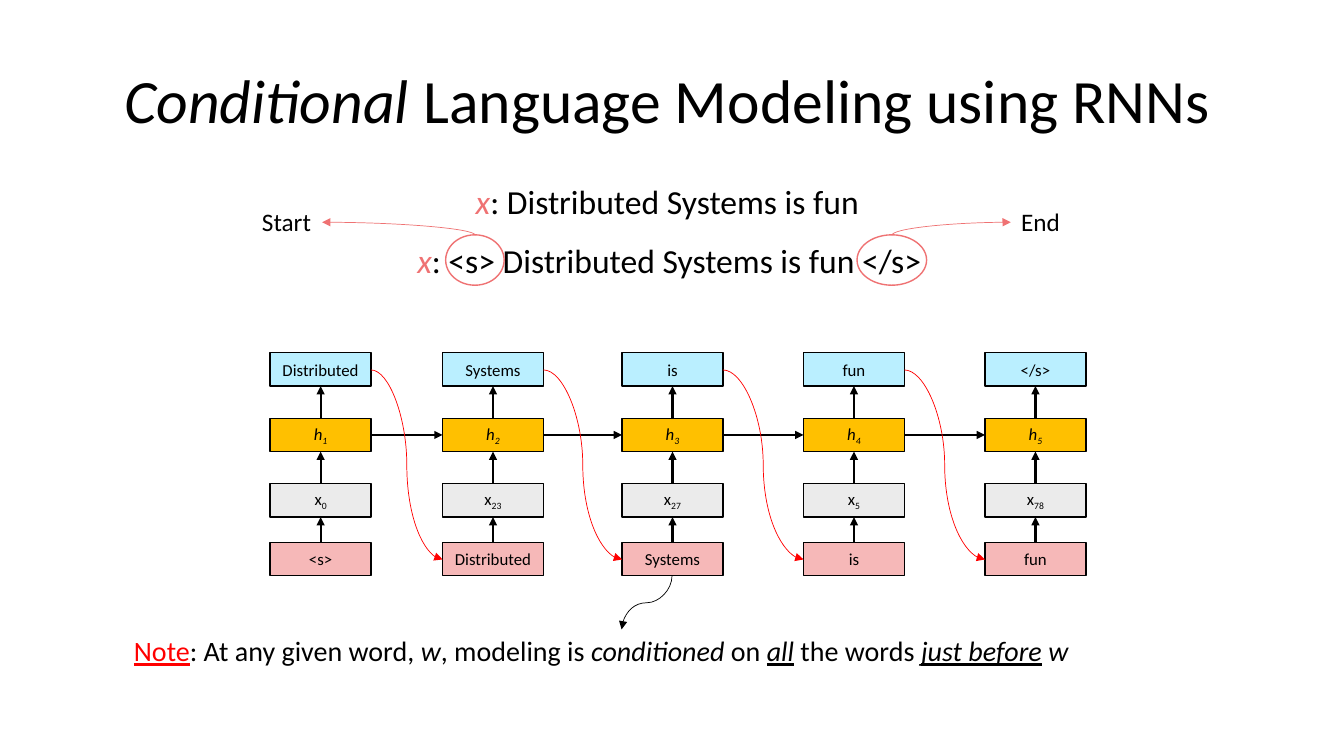
import pptx
import pptx.util
import pptx.dml.color
import pptx.enum.shapes
import pptx.enum.text
import pptx.oxml
import pptx.oxml.ns

Inches = pptx.util.Inches
RGB = pptx.dml.color.RGBColor
SHAPE = pptx.enum.shapes.MSO_SHAPE
LINK = pptx.enum.shapes.MSO_CONNECTOR
ALIGN = pptx.enum.text.PP_ALIGN
ANCHOR = pptx.enum.text.MSO_ANCHOR
FIT = pptx.enum.text.MSO_AUTO_SIZE
qn = pptx.oxml.ns.qn

BLACK = RGB(0x00, 0x00, 0x00)
RED = RGB(0xFF, 0x00, 0x00)
CORAL = RGB(0xEF, 0x72, 0x73)
GREY = RGB(0xD9, 0xD9, 0xD9)
GOLD = RGB(0xFF, 0xC0, 0x00)
BLUE = RGB(0x77, 0xE1, 0xFF)

CELL_W, CELL_H = 1, 0.33
LEFTS = [2.68, 4.39, 6.17, 7.97, 9.77]
# Each row: top, fill, see-through, labels as (text, style) parts
ROWS = [
    (3.5, BLUE, True, [[(word, "")] for word in
                       ["Distributed", "Systems", "is", "fun", "</s>"]]),
    (4.15, GOLD, False, [[("h", "i"), (str(num), "is")]
                         for num in range(1, 6)]),
    (4.8, GREY, True, [[("x", ""), (num, "s")]
                       for num in ["0", "23", "27", "5", "78"]]),
    (5.38, CORAL, True, [[(word, "")] for word in
                         ["<s>", "Distributed", "Systems", "is", "fun"]]),
]


def write(para, parts, size):
    """Add (text, style[, colour]) parts; style letters: i, u, s (subscript)."""
    for text, style, *tint in parts:
        run = para.add_run()
        run.text = text
        font = run.font
        font.name = "Calibri"
        font.size = pptx.util.Pt(size)
        font.color.rgb = tint[0] if tint else BLACK
        if "i" in style:
            font.italic = True
        if "u" in style:
            font.underline = True
        if "s" in style:
            run._r.get_or_add_rPr().set("baseline", "-25000")


def add_text(slide, box, parts, size):
    frame = slide.shapes.add_textbox(*map(Inches, box)).text_frame
    frame.word_wrap = False
    frame.auto_size = FIT.SHAPE_TO_FIT_TEXT
    write(frame.paragraphs[0], parts, size)


def add_title(slide):
    box = slide.shapes.add_textbox(Inches(0.83), Inches(0.3),
                                   Inches(11.58), Inches(1.45))
    frame = box.text_frame
    frame.word_wrap = True
    frame.vertical_anchor = ANCHOR.MIDDLE
    para = frame.paragraphs[0]
    para.alignment = ALIGN.CENTER
    para.line_spacing = 0.9
    write(para, [("Conditional", "i"),
                 (" Language Modeling using RNNs", "")], 44)


def add_cell(slide, left, top, fill, clear, parts):
    cell = slide.shapes.add_shape(SHAPE.RECTANGLE, Inches(left), Inches(top),
                                  Inches(CELL_W), Inches(CELL_H))
    cell.shadow.inherit = False
    cell.fill.solid()
    cell.fill.fore_color.rgb = fill
    if clear:
        tint = cell.element.spPr.find(".//" + qn("a:srgbClr"))
        tint.append(tint.makeelement(qn("a:alpha"), {"val": "50000"}))
    cell.line.color.rgb = BLACK
    cell.line.width = pptx.util.Pt(1)
    frame = cell.text_frame
    frame.vertical_anchor = ANCHOR.MIDDLE
    frame.paragraphs[0].alignment = ALIGN.CENTER
    write(frame.paragraphs[0], parts, 12)
    return cell


def add_ring(slide, left, width):
    ring = slide.shapes.add_shape(SHAPE.OVAL, Inches(left), Inches(2.33),
                                  Inches(width), Inches(0.5))
    ring.shadow.inherit = False
    ring.fill.background()
    ring.line.color.rgb = CORAL
    ring.line.width = pptx.util.Pt(1)


def style_link(link, colour, width, end):
    """Colour a connector and put a triangle at headEnd or tailEnd."""
    link.line.color.rgb = colour
    link.line.width = pptx.util.Pt(width)
    props = link.element.spPr
    line = props.find(qn("a:ln"))
    line.append(line.makeelement(qn(f"a:{end}"), {"type": "triangle"}))
    props.append(props.makeelement(qn("a:effectLst"), {}))


def join(slide, start, side, stop, goal, end):
    """Link a side of one cell to a side of another with a straight arrow."""
    link = slide.shapes.add_connector(LINK.STRAIGHT, 0, 0, 0, 0)
    link.begin_connect(start, side)
    link.end_connect(stop, goal)
    style_link(link, BLACK, 1.5, end)


def add_curve(slide, box, colour, turn=0, flips="", bends=3):
    """Draw a curved arrow; box is its frame before the turn in degrees."""
    left, top, width, height = box
    link = slide.shapes.add_connector(
        LINK.CURVE, Inches(left), Inches(top),
        Inches(left + width), Inches(top + height))
    props = link.element.spPr
    frame = props.find(qn("a:xfrm"))
    if turn:
        frame.set("rot", str(turn * 60000))
    for axis in flips:
        frame.set(f"flip{axis}", "1")
    props.find(qn("a:prstGeom")).set("prst", f"curvedConnector{bends}")
    style_link(link, colour, 0.5, "tailEnd")


def add_network(slide):
    grid = [[add_cell(slide, left, top, fill, clear, parts)
             for left, parts in zip(LEFTS, labels)]
            for top, fill, clear, labels in ROWS]
    for upper, lower in zip(grid, grid[1:]):
        for above, below in zip(upper, lower):
            join(slide, above, 2, below, 0, "headEnd")
    hidden = grid[1]
    for cell, after in zip(hidden, hidden[1:]):
        join(slide, cell, 3, after, 1, "tailEnd")
    for left, after in zip(LEFTS, LEFTS[1:]):
        right = left + CELL_W
        add_curve(slide, (right, 3.67, after - right, 1.88), RED)


def main():
    deck = pptx.Presentation()
    deck.slide_width = Inches(13.33)
    deck.slide_height = Inches(7.5)
    slide = deck.slides.add_slide(deck.slide_layouts[6])

    add_title(slide)
    add_text(slide, (4.62, 1.75, 4.09, 0.5),
             [("x", "i", CORAL), (": Distributed Systems is fun", "")], 24)
    add_text(slide, (4.04, 2.33, 5.25, 0.5),
             [("x", "i", CORAL),
              (": <s> Distributed Systems is fun </s>", "")], 24)
    add_text(slide, (2.5, 2, 0.69, 0.4), [("Start", "")], 18)
    add_text(slide, (10.03, 2, 0.59, 0.4), [("End", "")], 18)
    add_ring(slide, 4.42, 0.58)
    add_ring(slide, 8.5, 0.69)
    add_curve(slide, (3.89, 1.51, 0.13, 1.52), CORAL, 270, "V", 2)
    add_curve(slide, (9.37, 1.68, 0.13, 1.18), CORAL, 90, "HV", 2)

    add_network(slide)
    add_text(slide, (1.23, 6.24, 9.87, 0.44), [
        ("Note", "u", RED), (": At any given word, ", ""), ("w", "i"),
        (", modeling is ", ""), ("conditioned", "i"), (" on ", ""),
        ("all", "iu"), (" the words ", ""), ("just before", "iu"),
        (" ", ""), ("w", "i")], 20)
    add_curve(slide, (6.15, 5.73, 0.53, 0.5), BLACK, 90)
    deck.save("out.pptx")


if __name__ == "__main__":
    main()
